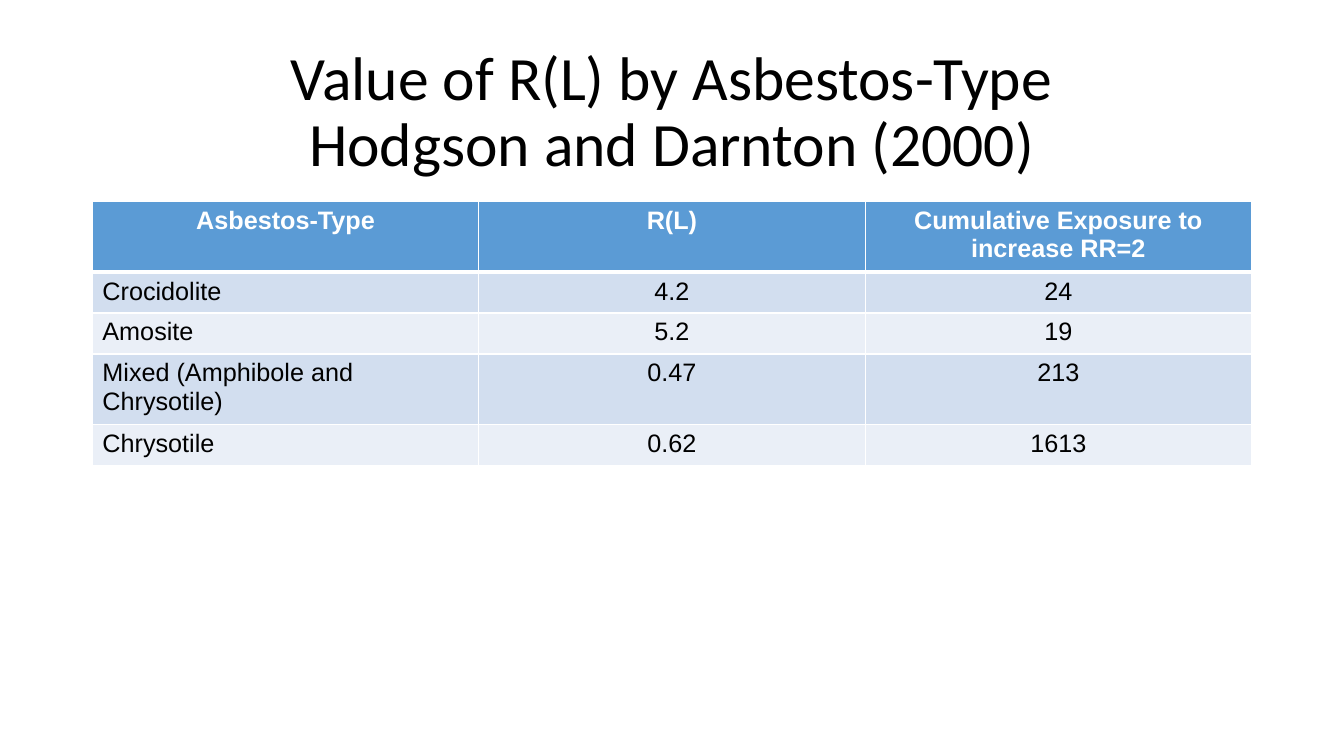
from dataclasses import dataclass

from pptx import Presentation
from pptx.dml.color import RGBColor as RGB
from pptx.enum.text import MSO_ANCHOR as ANCHOR, PP_ALIGN as ALIGN
from pptx.oxml import parse_xml
from pptx.oxml.ns import nsdecls
from pptx.util import Pt


@dataclass(frozen=True)
class Theme:
    """Colours, fonts and type sizes of the slide."""
    ink: str = "000000"
    white: str = "FFFFFF"
    header: str = "5B9BD5"
    bands: tuple = ("D2DEEF", "EAEFF7")
    title_font: str = "Calibri"
    table_font: str = "Arial"
    title_size: float = 44
    table_size: float = 18


T = Theme()
ROWS = [
    ("Asbestos-Type", "R(L)", "Cumulative Exposure to increase RR=2"),
    ("Crocidolite", "4.2", "24"),
    ("Amosite", "5.2", "19"),
    ("Mixed (Amphibole and Chrysotile)", "0.47", "213"),
    ("Chrysotile", "0.62", "1613"),
]
ROW_HEIGHTS = (47.4, 29.2, 29.2, 47.4, 29.2)


def write(tf, text, font, size, color=T.ink, bold=False, align=ALIGN.CENTER, spacing=None):
    """Fill a text frame with one formatted paragraph."""
    p = tf.paragraphs[0]
    p.text = text
    p.alignment = align
    p.line_spacing = spacing
    for r in p.runs:
        r.font.name, r.font.size, r.font.bold = font, Pt(size), bold
        r.font.color.rgb = RGB.from_string(color)


def add_borders(cell, bottom=1, top=1):
    """Draw solid white lines on the four sides of a cell."""
    tcPr = cell._tc.get_or_add_tcPr()
    for side, width in (("L", 1), ("R", 1), ("T", top), ("B", bottom)):
        tcPr.append(parse_xml(
            f'<a:ln{side} {nsdecls("a")} w="{Pt(width)}"><a:solidFill>'
            f'<a:srgbClr val="{T.white}"/></a:solidFill></a:ln{side}>'))


def add_title(s, x, y, w, h):
    """Place the two-line title in its box."""
    tf = s.shapes.add_textbox(Pt(x), Pt(y), Pt(w), Pt(h)).text_frame
    tf.word_wrap = True
    tf.vertical_anchor = ANCHOR.MIDDLE
    write(tf, "Value of R(L) by Asbestos-Type\vHodgson and Darnton (2000)",
          T.title_font, T.title_size, spacing=0.9)


def add_risk_table(s, x, y, w):
    """Place the banded table of R(L) values across the given width."""
    tbl = s.shapes.add_table(len(ROWS), len(ROWS[0]), Pt(x), Pt(y), Pt(w),
                             Pt(sum(ROW_HEIGHTS))).table
    for col in tbl.columns:
        col.width = Pt(w / len(ROWS[0]))
    for i, (values, height) in enumerate(zip(ROWS, ROW_HEIGHTS)):
        tbl.rows[i].height = Pt(height)
        head = i == 0
        for j, value in enumerate(values):
            cell = tbl.cell(i, j)
            add_borders(cell, bottom=3 if head else 1, top=3 if i == 1 else 1)
            cell.fill.solid()
            cell.fill.fore_color.rgb = RGB.from_string(T.header if head else T.bands[(i - 1) % 2])
            write(cell.text_frame, value, T.table_font, T.table_size,
                  color=T.white if head else T.ink, bold=head,
                  align=ALIGN.CENTER if head or j else ALIGN.LEFT)


def main():
    """Build the slide and save it."""
    prs = Presentation()
    prs.slide_width, prs.slide_height = Pt(960), Pt(540)
    s = prs.slides.add_slide(prs.slide_layouts[6])
    add_title(s, 66, 28.75, 828, 104.4)
    add_risk_table(s, 66, 144, 828)
    prs.save("out.pptx")


if __name__ == "__main__":
    main()
